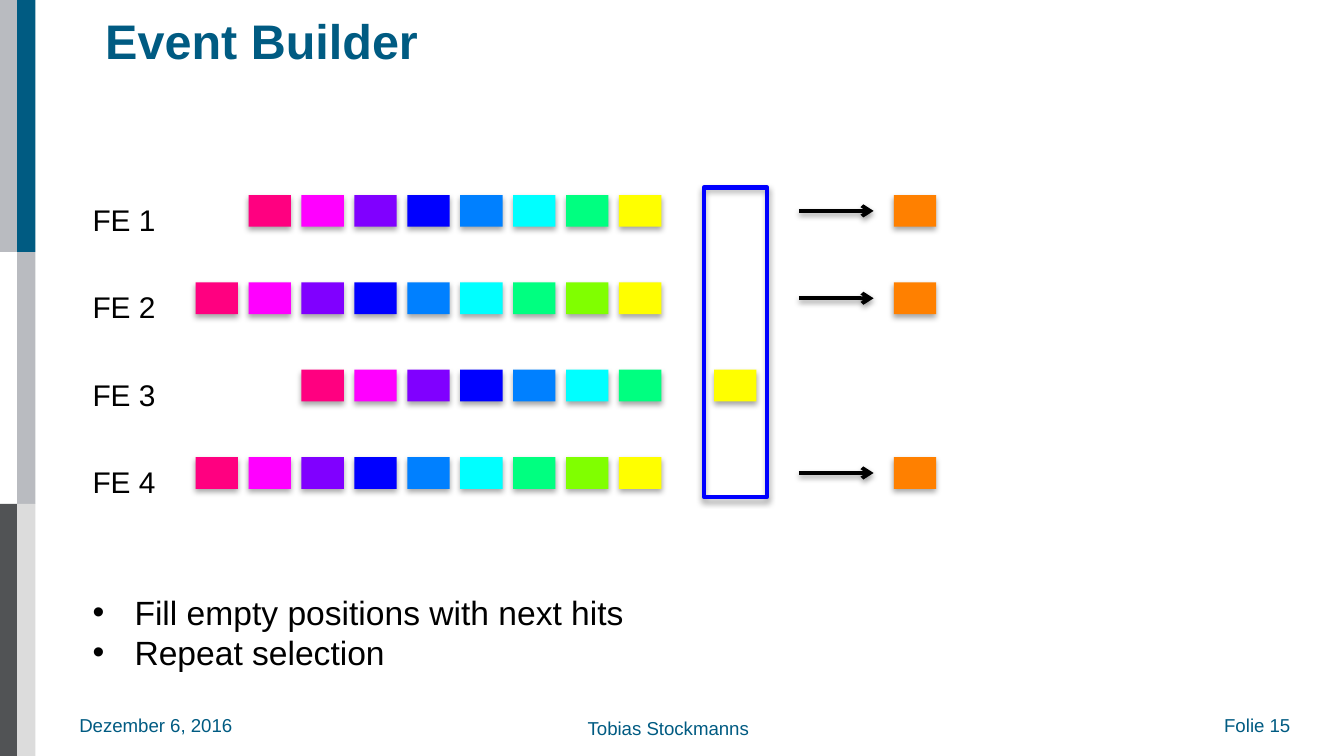
from dataclasses import dataclass

from pptx import Presentation
from pptx import util as u
from pptx.dml.color import RGBColor
from pptx.enum import shapes, text
from pptx.oxml import ns, xmlchemy

Pt = u.Pt


@dataclass(frozen=True)
class Theme:
    font: str = "Arial"
    brand: str = "005B82"
    ink: str = "000000"
    silver: str = "B9BBC0"
    dark: str = "515355"
    light: str = "DCDCDC"
    frame: str = "0000FF"
    sent: str = "FF8000"
    title: int = 26
    body: int = 18
    label: int = 16
    footer: int = 10


T = Theme()

PINK, MAGENTA, VIOLET, BLUE = "FF0080", "FF00FF", "8000FF", "0000FF"
AZURE, CYAN, MINT, LIME, YELLOW = "0080FF", "00FFFF", "00FF80", "80FF00", "FFFF00"
SPECTRUM = [PINK, MAGENTA, VIOLET, BLUE, AZURE, CYAN, MINT, LIME, YELLOW]

# Front ends: waiting hits (right-aligned), hit under selection, hit already sent
FRONT_ENDS = [
    ("FE 1", [c for c in SPECTRUM if c != LIME], None, T.sent),
    ("FE 2", SPECTRUM, None, T.sent),
    ("FE 3", SPECTRUM[:7], YELLOW, None),
    ("FE 4", SPECTRUM, None, T.sent),
]

# Grid of hits, in points
ROW_TOP, ROW_STEP = 104.5, 46.8
HIT_W, HIT_H, HIT_STEP = 22.7, 17, 28.35
LAST_HIT, SELECTED, SENT = 331.6, 382.5, 478.8
ARROW_START, ARROW_END = 428, 468
LABEL_LEFT = 42.5


def set_all(obj, values):
    for name, value in values.items():
        setattr(obj, name, value)


def add_child(parent, tag, **attrs):
    child = xmlchemy.OxmlElement(tag)
    for name, value in attrs.items():
        child.set(name, str(value))
    parent.append(child)
    return child


def add_shadow(sp, alpha, dist):
    sp_pr = sp._element.spPr
    effects = sp_pr.find(ns.qn("a:effectLst"))
    if effects is None:
        effects = add_child(sp_pr, "a:effectLst")
    outer = add_child(effects, "a:outerShdw", blurRad=Pt(3.1), dist=Pt(dist),
                      dir=90 * 60000, rotWithShape=0)
    color = add_child(outer, "a:srgbClr", val=T.ink)
    add_child(color, "a:alpha", val=alpha * 1000)


def add_rect(slide, x, y, w, h, fill=None, line=None, shadow=False):
    sp = slide.shapes.add_shape(shapes.MSO_SHAPE.RECTANGLE, Pt(x), Pt(y), Pt(w), Pt(h))
    if fill:
        sp.fill.solid()
        sp.fill.fore_color.rgb = RGBColor.from_string(fill)
    else:
        sp.fill.background()
    if line:
        sp.line.color.rgb = RGBColor.from_string(line)
        sp.line.width = Pt(2.25)
    else:
        sp.line.fill.background()
    sp.shadow.inherit = False
    if shadow:
        add_shadow(sp, alpha=35, dist=1.8)


def add_hit(slide, x, y, color):
    add_rect(slide, x, y, HIT_W, HIT_H, fill=color, shadow=True)


def add_arrow(slide, x1, x2, y):
    line = slide.shapes.add_connector(shapes.MSO_CONNECTOR.STRAIGHT,
                                      Pt(x1), Pt(y), Pt(x2), Pt(y))
    line.line.color.rgb = RGBColor.from_string(T.ink)
    line.line.width = Pt(2)
    add_child(line.line._get_or_add_ln(), "a:tailEnd", type="arrow")
    add_shadow(line, alpha=38, dist=1.6)


def add_text(slide, x, y, w, h, lines, size, color=T.ink, bold=False,
             bullet=False, inset=True, frame=None):
    tf = slide.shapes.add_textbox(Pt(x), Pt(y), Pt(w), Pt(h)).text_frame
    set_all(tf, {"word_wrap": False, "auto_size": text.MSO_AUTO_SIZE.SHAPE_TO_FIT_TEXT,
                 **(frame or {})})
    if not inset:
        set_all(tf, dict.fromkeys(
            ("margin_left", "margin_top", "margin_right", "margin_bottom"), 0))
    for i, words in enumerate(lines):
        p = tf.add_paragraph() if i else tf.paragraphs[0]
        if bullet:
            p_pr = p._p.get_or_add_pPr()
            p_pr.set("marL", str(Pt(22.5)))
            p_pr.set("indent", str(-Pt(22.5)))
            add_child(p_pr, "a:buFont", typeface=T.font)
            add_child(p_pr, "a:buChar", char="•")
        r = p.add_run()
        r.text = words
        set_all(r.font, {"name": T.font, "size": Pt(size), "bold": bold})
        r.font.color.rgb = RGBColor.from_string(color)


def add_sidebar(slide):
    columns = [(0, [T.silver, None, T.dark]), (9.2, [T.brand, T.silver, T.light])]
    for x, colors in columns:
        for i, color in enumerate(colors):
            if color:
                add_rect(slide, x, 135 * i, 9.8, 135, fill=color)


def add_footer(slide):
    for x, y, w, words in [(42.5, 382.5, 91.5, "Dezember 6, 2016"),
                           (655.8, 382.5, 44.6, "Folie 15"),
                           (314.8, 384, 87.8, "Tobias Stockmanns")]:
        add_text(slide, x, y, w, 12, [words], T.footer, T.brand, inset=False)


def add_front_end(slide, y, name, waiting, selected, sent):
    add_text(slide, LABEL_LEFT, y, 49, 26.6, [name], T.label)
    for i, color in enumerate(reversed(waiting)):
        add_hit(slide, LAST_HIT - i * HIT_STEP, y, color)
    if selected:
        add_hit(slide, SELECTED, y, selected)
    if sent:
        add_arrow(slide, ARROW_START, ARROW_END, y + HIT_H / 2)
        add_hit(slide, SENT, y, sent)


def main():
    prs = Presentation()
    set_all(prs, {"slide_width": Pt(720), "slide_height": Pt(405)})
    slide = prs.slides.add_slide(prs.slide_layouts[6])

    # Frame of the page
    add_sidebar(slide)
    add_footer(slide)
    add_text(slide, 56.4, 4.5, 523.5, 34, ["Event Builder"], T.title, T.brand,
             bold=True, inset=False,
             frame={"word_wrap": True, "auto_size": text.MSO_AUTO_SIZE.NONE,
                    "vertical_anchor": text.MSO_ANCHOR.MIDDLE})

    # Hit queues and the selection window
    for i, front_end in enumerate(FRONT_ENDS):
        add_front_end(slide, ROW_TOP + i * ROW_STEP, *front_end)
    add_rect(slide, 377, 100.4, 34, 165.8, line=T.frame, shadow=True)

    # Explanation
    add_text(slide, LABEL_LEFT, 313.4, 301, 51,
             ["Fill empty positions with next hits", "Repeat selection"],
             T.body, bullet=True)

    prs.save("out.pptx")


if __name__ == "__main__":
    main()
